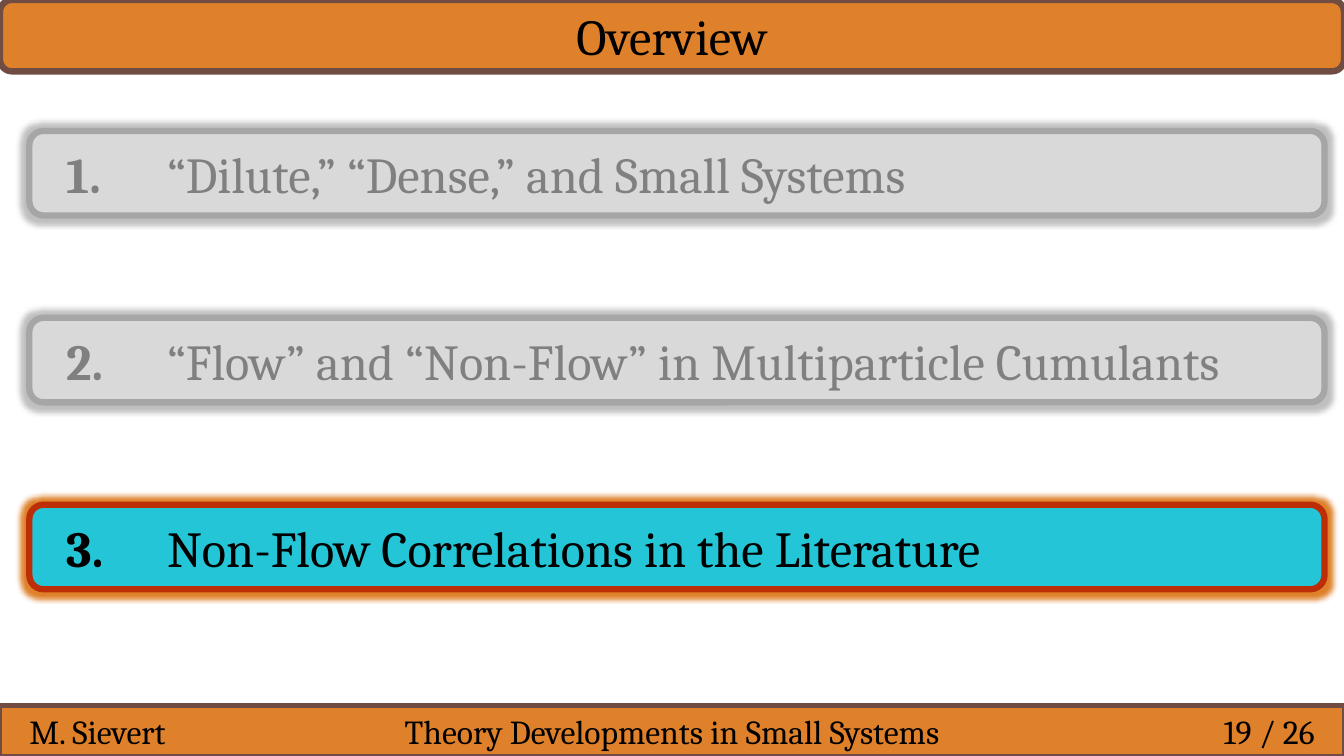
from dataclasses import dataclass

from lxml.etree import SubElement
from pptx import Presentation
from pptx.dml.color import RGBColor
from pptx.enum.shapes import MSO_SHAPE
from pptx.enum.text import MSO_ANCHOR, MSO_AUTO_SIZE, PP_ALIGN
from pptx.oxml.ns import qn
from pptx.shapes.autoshape import Shape
from pptx.slide import Slide
from pptx.text.text import Font, TextFrame
from pptx.util import Cm, Pt

ORANGE = RGBColor(0xDF, 0x80, 0x2A)
BROWN = RGBColor(0x70, 0x4C, 0x42)
BLACK = RGBColor(0x00, 0x00, 0x00)
LIGHT_GRAY = RGBColor(0xD9, 0xD9, 0xD9)
MID_GRAY = RGBColor(0xA6, 0xA6, 0xA6)
DARK_GRAY = RGBColor(0x80, 0x80, 0x80)
GLOW_GRAY = RGBColor(0xBF, 0xBF, 0xBF)
TURQUOISE = RGBColor(0x23, 0xC5, 0xD6)
RED = RGBColor(0xBB, 0x2E, 0x07)

FONT_NAME = "Cambria"
SLIDE_WIDTH = 33.87
SLIDE_HEIGHT = 19.05
HEADER_HEIGHT = 1.8
FOOTER_TOP = 17.78
FOOTER_HEIGHT = SLIDE_HEIGHT - FOOTER_TOP
FIRST_TOPIC_TOP = 3.3
TOPIC_PITCH = 4.71
TOPIC_HEIGHT = 2.13
TOPIC_TEXT_HEIGHT = 1.8
HEADING_TAB = 2.54


@dataclass(frozen=True)
class Area:
    left: float
    top: float
    width: float
    height: float


@dataclass(frozen=True)
class TopicStyle:
    fill: RGBColor
    line: RGBColor
    text: RGBColor
    glow: RGBColor


@dataclass(frozen=True)
class Topic:
    heading: str
    style: TopicStyle


@dataclass(frozen=True)
class FooterEntry:
    wording: str
    left: float
    width: float
    alignment: PP_ALIGN


INACTIVE = TopicStyle(LIGHT_GRAY, MID_GRAY, DARK_GRAY, GLOW_GRAY)
ACTIVE = TopicStyle(TURQUOISE, RED, BLACK, ORANGE)

TOPICS = [
    Topic("“Dilute,” “Dense,” and Small Systems", INACTIVE),
    Topic("“Flow” and “Non-Flow” in Multiparticle Cumulants", INACTIVE),
    Topic("Non-Flow Correlations in the Literature", ACTIVE),
]

FOOTER_ENTRIES = [
    FooterEntry("M. Sievert", 0.49, 4.27, PP_ALIGN.LEFT),
    FooterEntry("Theory Developments in Small Systems", 9.53, 14.81, PP_ALIGN.CENTER),
    FooterEntry("19 / 26", 29.87, 3.51, PP_ALIGN.RIGHT),
]


def format_font(font: Font, size: float, color: RGBColor, bold: bool = False) -> None:
    font.name = FONT_NAME
    font.size = Pt(size)
    font.bold = bold
    font.color.rgb = color


def add_panel(slide: Slide, preset: MSO_SHAPE, area: Area, fill: RGBColor,
              line: RGBColor, line_width: float) -> Shape:
    panel = slide.shapes.add_shape(
        preset, Cm(area.left), Cm(area.top), Cm(area.width), Cm(area.height))
    panel.shadow.inherit = False
    panel.fill.solid()
    panel.fill.fore_color.rgb = fill
    panel.line.color.rgb = line
    panel.line.width = Pt(line_width)
    return panel


def add_glow(panel: Shape, color: RGBColor) -> None:
    effects = panel._element.spPr.find(qn("a:effectLst"))
    glow = SubElement(effects, qn("a:glow"), rad=str(Pt(8)))
    SubElement(glow, qn("a:srgbClr"), val=str(color))


def add_label(slide: Slide, area: Area) -> TextFrame:
    label = slide.shapes.add_textbox(
        Cm(area.left), Cm(area.top), Cm(area.width), Cm(area.height))
    label.text_frame.word_wrap = True
    label.text_frame.vertical_anchor = MSO_ANCHOR.MIDDLE
    return label.text_frame


def add_header(slide: Slide) -> None:
    area = Area(0, 0, SLIDE_WIDTH, HEADER_HEIGHT)
    bar = add_panel(slide, MSO_SHAPE.ROUNDED_RECTANGLE, area, ORANGE, BROWN, 4.5)
    title = slide.shapes.title
    title._element.addprevious(bar._element)
    title.left, title.top = Cm(area.left), Cm(area.top)
    title.width, title.height = Cm(area.width), Cm(area.height)
    frame = title.text_frame
    frame.text = "Overview"
    frame.auto_size = MSO_AUTO_SIZE.NONE
    frame.vertical_anchor = MSO_ANCHOR.MIDDLE
    frame.paragraphs[0].alignment = PP_ALIGN.CENTER
    format_font(frame.paragraphs[0].runs[0].font, 36, BLACK)


def add_footer(slide: Slide) -> None:
    bar_area = Area(0, FOOTER_TOP, SLIDE_WIDTH, FOOTER_HEIGHT)
    add_panel(slide, MSO_SHAPE.RECTANGLE, bar_area, ORANGE, BROWN, 3)
    for entry in FOOTER_ENTRIES:
        frame = add_label(slide, Area(entry.left, FOOTER_TOP, entry.width, FOOTER_HEIGHT))
        frame.vertical_anchor = MSO_ANCHOR.TOP
        frame.text = entry.wording
        frame.paragraphs[0].alignment = entry.alignment
        format_font(frame.paragraphs[0].runs[0].font, 24, BLACK)


def add_topic(slide: Slide, number: int, topic: Topic) -> None:
    top = FIRST_TOPIC_TOP + (number - 1) * TOPIC_PITCH
    style = topic.style
    panel = add_panel(slide, MSO_SHAPE.ROUNDED_RECTANGLE,
                      Area(0.74, top, 32.64, TOPIC_HEIGHT), style.fill, style.line, 4.5)
    add_glow(panel, style.glow)
    text_top = top + (TOPIC_HEIGHT - TOPIC_TEXT_HEIGHT) / 2
    frame = add_label(slide, Area(1.42, text_top, 31.37, TOPIC_TEXT_HEIGHT))
    paragraph = frame.paragraphs[0]
    tabs = SubElement(paragraph._p.get_or_add_pPr(), qn("a:tabLst"))
    SubElement(tabs, qn("a:tab"), pos=str(Cm(HEADING_TAB)), algn="l")
    for wording, bold in ((f"{number}.", True), (f"\t{topic.heading}", False)):
        run = paragraph.add_run()
        run.text = wording
        format_font(run.font, 36, style.text, bold)


def main() -> None:
    presentation = Presentation()
    presentation.slide_width = Cm(SLIDE_WIDTH)
    presentation.slide_height = Cm(SLIDE_HEIGHT)
    slide = presentation.slides.add_slide(presentation.slide_layouts[5])
    add_header(slide)
    add_footer(slide)
    for number, topic in enumerate(TOPICS, start=1):
        add_topic(slide, number, topic)
    presentation.save("out.pptx")


if __name__ == "__main__":
    main()
